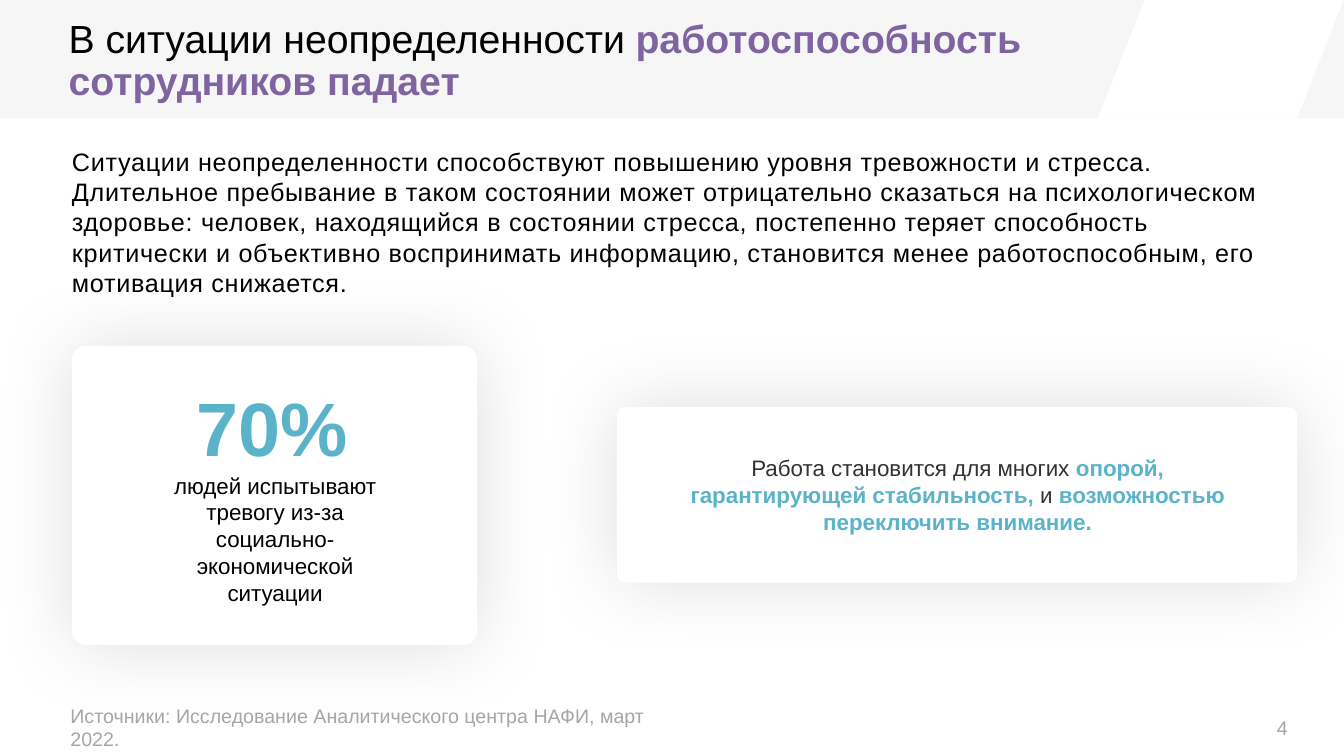
from lxml.etree import SubElement
from pptx import Presentation
from pptx.dml.color import RGBColor
from pptx.enum.shapes import MSO_SHAPE as Preset
from pptx.enum.text import MSO_ANCHOR as Anchor, PP_ALIGN as Align
from pptx.oxml.ns import qn
from pptx.util import Pt

BLACK, PURPLE, BLUE, GRAPHITE, GREY = "000000", "8064A2", "5BB3CA", "303233", "A5A5A5"


def color(value):
    return RGBColor.from_string(value)


class SlideBuilder:
    """Draws the elements of one slide in a shared style."""

    font = "Arial"

    def __init__(self, slide):
        self.slide = slide

    def panel(self, preset, box, fill, adjustment=None):
        shape = self.slide.shapes.add_shape(preset, *map(Pt, box))
        shape.shadow.inherit = False
        shape.fill.solid()
        shape.fill.fore_color.rgb = color(fill)
        shape.line.fill.background()
        if adjustment is not None:
            shape.adjustments[0] = adjustment
        return shape

    def card(self, box):
        shape = self.panel(Preset.ROUNDED_RECTANGLE, box, "FFFFFF", 0.047)
        effects = shape._element.spPr.find(qn("a:effectLst"))
        shadow = SubElement(effects, qn("a:outerShdw"), blurRad=str(Pt(56)), dist="0",
                            dir="0", algn="ctr", rotWithShape="0")
        tint = SubElement(shadow, qn("a:srgbClr"), val=BLACK)
        SubElement(tint, qn("a:alpha"), val="12000")

    def text(self, box, paragraphs, align=Align.LEFT, anchor=Anchor.TOP, wrap=True,
             margins=(7.2, 3.6, 7.2, 3.6), line_spacing=None, tracking=None):
        frame = self.slide.shapes.add_textbox(*map(Pt, box)).text_frame
        frame.word_wrap = wrap
        frame.vertical_anchor = anchor
        (frame.margin_left, frame.margin_top,
         frame.margin_right, frame.margin_bottom) = map(Pt, margins)
        for index, runs in enumerate(paragraphs):
            paragraph = frame.add_paragraph() if index else frame.paragraphs[0]
            paragraph.alignment = align
            if line_spacing:
                paragraph.line_spacing = line_spacing
            for words, size, ink, bold in runs:
                run = paragraph.add_run()
                run.text = words
                run.font.name = self.font
                run.font.size = Pt(size)
                run.font.bold = bold
                run.font.color.rgb = color(ink)
                if tracking:
                    run.font._element.set("spc", str(int(tracking * 100)))


def main():
    presentation = Presentation()
    presentation.slide_width, presentation.slide_height = Pt(960), Pt(540)
    builder = SlideBuilder(presentation.slides.add_slide(presentation.slide_layouts[6]))

    builder.panel(Preset.RECTANGLE, (0, -0.5, 960, 85), "F6F6F6")
    builder.panel(Preset.PARALLELOGRAM, (784.3, -0.5, 175.7, 85), "FFFFFF", 0.394)
    builder.text((51.4, 104.4, 875.5, 112.3), [[(
        "Ситуации неопределенности способствуют повышению уровня тревожности и стресса. "
        "Длительное пребывание в таком состоянии может отрицательно сказаться на "
        "психологическом здоровье: человек, находящийся в состоянии стресса, постепенно "
        "теряет способность критически и объективно воспринимать информацию, становится "
        "менее работоспособным, его мотивация снижается.", 18, BLACK, False)]],
        margins=(0, 0, 7.2, 3.6), tracking=0.5)
    builder.text((42, 16.6, 700, 54.7), [[
        ("В ситуации неопределенности ", 28, BLACK, False),
        ("работоспособность сотрудников падает", 28, PURPLE, True)]],
        anchor=Anchor.MIDDLE, line_spacing=0.9)
    builder.text((905, 507.6, 22.3, 24.5), [[("4", 14, GREY, False)]], wrap=False)

    builder.card((51.4, 247, 289.4, 213.6))
    builder.text((43.2, 499, 462.2, 24.5), [[
        ("Источники: Исследование Аналитического центра НАФИ, март 2022.",
         14, "A6A6A6", False)]])
    builder.text((97.9, 268.6, 197.3, 170), [
        [("70%", 54, BLUE, True), (" ", 16, BLACK, False)],
        [("людей испытывают тревогу из-за социально-экономической ситуации",
          16, BLACK, False)]], align=Align.CENTER)

    builder.card((440.6, 290.9, 486, 125.3))
    builder.text((472.3, 321.1, 423.4, 65.5), [[
        ("Работа становится для многих ", 16, GRAPHITE, False),
        ("опорой, гарантирующей стабильность,", 16, BLUE, True),
        (" и ", 16, GRAPHITE, False),
        ("возможностью переключить внимание.", 16, BLUE, True)]], align=Align.CENTER)

    presentation.save("out.pptx")


if __name__ == "__main__":
    main()
